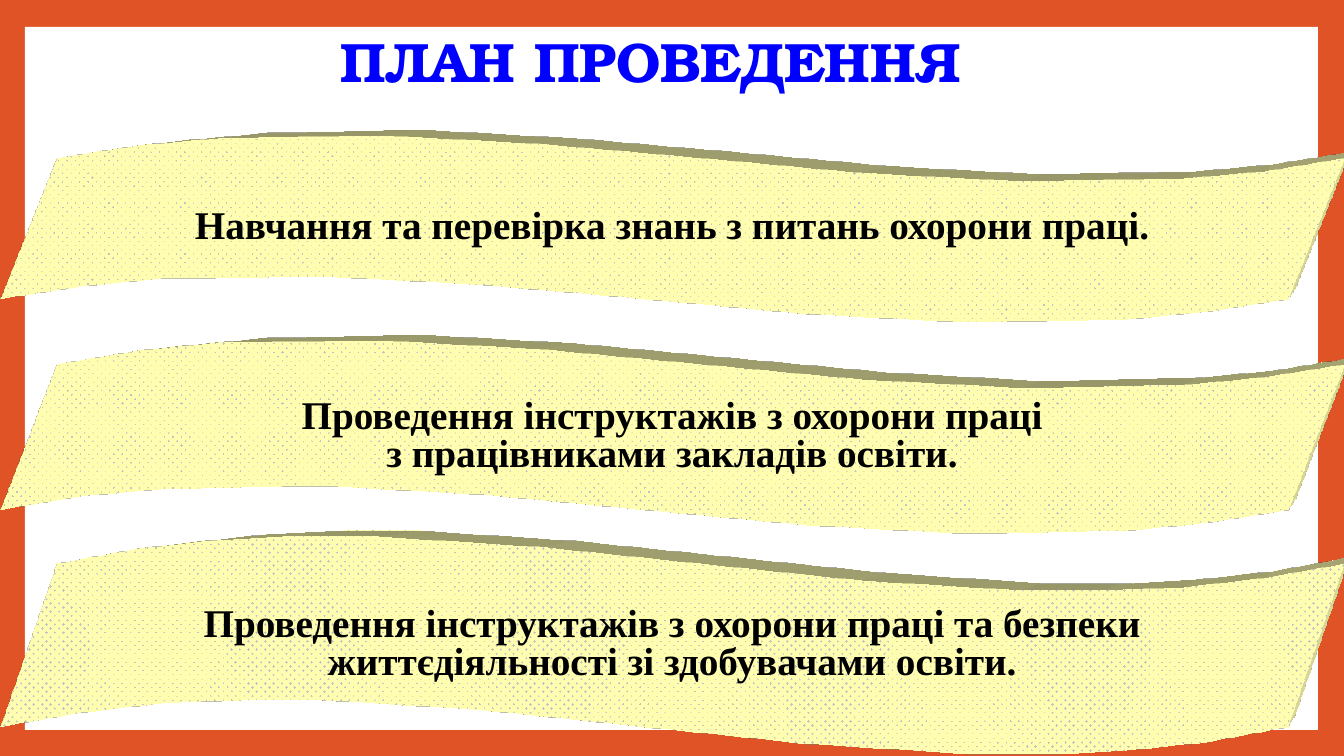
"""Build the slide with the plan title and three waving banners."""
from dataclasses import dataclass

from pptx import Presentation
from pptx.dml.color import RGBColor
from pptx.enum.dml import MSO_PATTERN
from pptx.enum.shapes import MSO_SHAPE
from pptx.enum.text import MSO_ANCHOR, MSO_AUTO_SIZE, PP_ALIGN
from pptx.oxml import parse_xml
from pptx.oxml.ns import nsdecls
from pptx.slide import Slide
from pptx.text.text import TextFrame
from pptx.util import Emu, Pt

RECT, WAVE = MSO_SHAPE.RECTANGLE, MSO_SHAPE.WAVE
WEAVE = MSO_PATTERN.WEAVE
MIDDLE, CENTER = MSO_ANCHOR.MIDDLE, PP_ALIGN.CENTER
NO_AUTOFIT = MSO_AUTO_SIZE.NONE
SLIDE_W, SLIDE_H = 1344, 756
TITLE_LAYOUT = 5


@dataclass(frozen=True)
class TextStyle:
    font: str
    size: float
    color: RGBColor
    spacing: float


@dataclass(frozen=True)
class Theme:
    frame: RGBColor = RGBColor(0xDF, 0x53, 0x27)
    paper: RGBColor = RGBColor(0xFF, 0xFF, 0xFF)
    banner: RGBColor = RGBColor(0xFF, 0xFE, 0xB0)
    title: TextStyle = TextStyle("TeX Gyre Bonum", 39.6, RGBColor(0, 0, 0xFF), 0.9)
    body: TextStyle = TextStyle("Times New Roman", 28, RGBColor(0, 0, 0), 0.8)


@dataclass(frozen=True)
class Banner:
    top: int
    height: int
    text: str


THEME = Theme()
BANNERS = (
    Banner(134, 189, "Навчання та перевірка знань з питань охорони праці."),
    Banner(339, 196, "Проведення інструктажів з охорони праці\n"
                     "з працівниками закладів освіти."),
    Banner(535, 221, "Проведення інструктажів з охорони праці та безпеки "
                     "життєдіяльності зі здобувачами освіти."),
)


def px(n: int) -> Emu:
    """Turn px into EMU."""
    return Emu(round(n * 914400 / 100.8))


def write(tf: TextFrame, text: str, style: TextStyle) -> None:
    """Fill a text frame with centred bold text."""
    tf.text = text
    tf.word_wrap = True
    tf.auto_size = NO_AUTOFIT
    tf.vertical_anchor = MIDDLE
    for p in tf.paragraphs:
        p.alignment = CENTER
        p.line_spacing = style.spacing
        for r in p.runs:
            r.font.name = style.font
            r.font.size = Pt(style.size)
            r.font.bold = True
            r.font.color.rgb = style.color


def add_paper(slide: Slide) -> None:
    """Lay the white sheet behind everything else."""
    sp = slide.shapes.add_shape(RECT, px(25), px(27), px(1293), px(703))
    sp.shadow.inherit = False
    sp.fill.solid()
    sp.fill.fore_color.rgb = THEME.paper
    sp.line.fill.background()
    slide.shapes.element.insert(2, sp.element)


def add_title(slide: Slide) -> None:
    """Place and format the title placeholder."""
    sp = slide.shapes.title
    sp.left, sp.top, sp.width, sp.height = px(0), px(30), px(1302), px(70)
    write(sp.text_frame, "ПЛАН ПРОВЕДЕННЯ", THEME.title)


def add_banner(slide: Slide, banner: Banner) -> None:
    """Draw one extruded wave with its text."""
    sp = slide.shapes.add_shape(WAVE, px(0), px(banner.top), px(SLIDE_W), px(banner.height))
    sp.adjustments[0], sp.adjustments[1] = 0.13, -0.021
    sp.shadow.inherit = False
    sp.fill.patterned()
    sp.fill.pattern = WEAVE
    sp.fill.fore_color.rgb = THEME.banner
    sp.fill.back_color.rgb = THEME.paper
    sp.line.fill.background()
    scene = (
        f'<a:scene3d {nsdecls("a")}><a:camera prst="legacyPerspectiveTopRight"/>'
        '<a:lightRig rig="legacyFlat3" dir="b"/></a:scene3d>'
    )
    depth = (
        f'<a:sp3d {nsdecls("a")} extrusionH="430200" prstMaterial="legacyMatte">'
        f'<a:extrusionClr><a:srgbClr val="{THEME.banner}"/></a:extrusionClr></a:sp3d>'
    )
    for xml in (scene, depth):
        sp.element.spPr.append(parse_xml(xml))
    write(sp.text_frame, banner.text, THEME.body)


def main() -> None:
    """Assemble and save the presentation."""
    prs = Presentation()
    prs.slide_width, prs.slide_height = px(SLIDE_W), px(SLIDE_H)
    slide = prs.slides.add_slide(prs.slide_layouts[TITLE_LAYOUT])
    slide.background.fill.solid()
    slide.background.fill.fore_color.rgb = THEME.frame
    add_paper(slide)
    add_title(slide)
    for banner in BANNERS:
        add_banner(slide, banner)
    prs.save("out.pptx")


if __name__ == "__main__":
    main()
